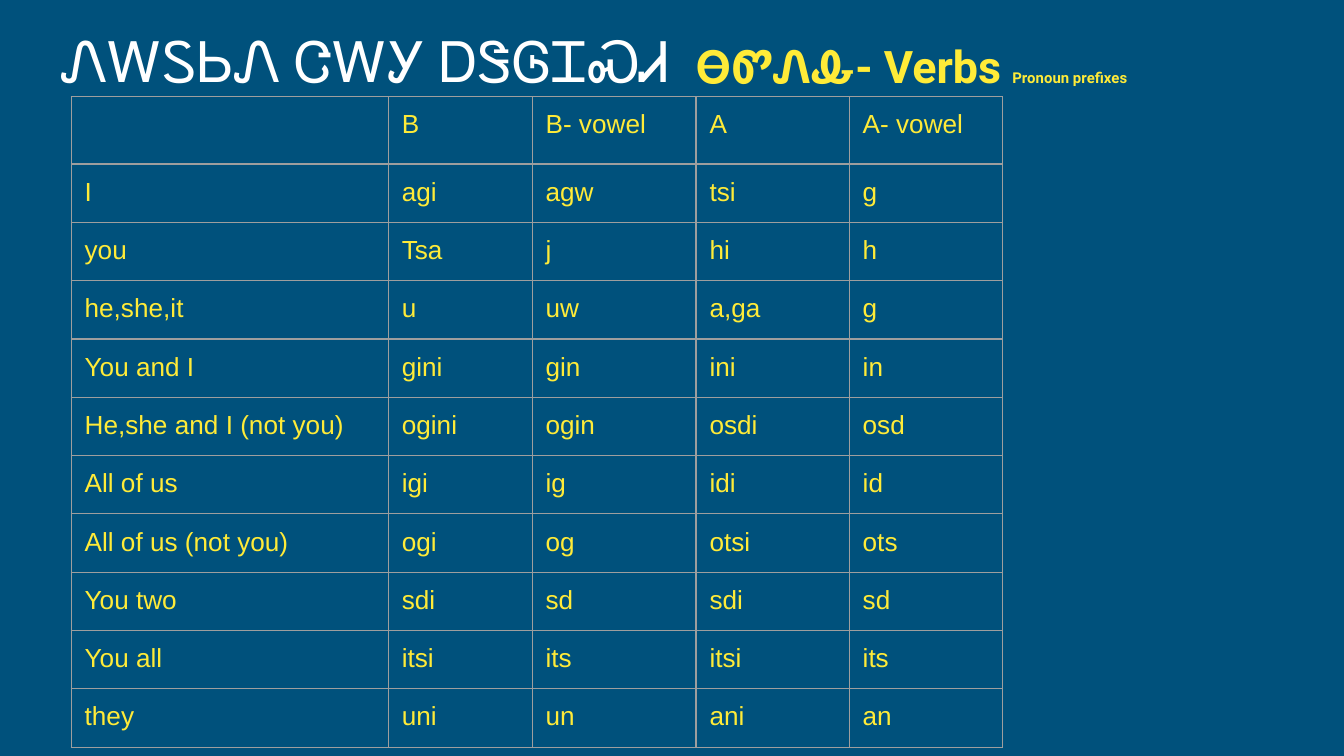
from pptx import Presentation
from pptx.dml.color import RGBColor
from pptx.enum.text import MSO_ANCHOR, MSO_AUTO_SIZE, PP_ALIGN
from pptx.oxml import parse_xml
from pptx.oxml.ns import nsdecls
from pptx.util import Inches, Pt

COLORS = {"background": "00517C", "title": "FFFFFF", "accent": "FFEB38", "border": "9E9E9E"}

TITLE = "ᏁᎳᏚᏏᏁ ᏣᎳᎩ ᎠᏕᎶᏆᏍᏗ"
SUBTITLE = [("ᎾᏛᏁᎲ- Verbs ", 24), ("Pronoun prefixes", 8)]
PREFIXES = [
    ("", "B", "B- vowel", "A", "A- vowel"),
    ("I", "agi", "agw", "tsi", "g"),
    ("you", "Tsa", "j", "hi", "h"),
    ("he,she,it", "u", "uw", "a,ga", "g"),
    ("You and I", "gini", "gin", "ini", "in"),
    ("He,she and I (not you)", "ogini", "ogin", "osdi", "osd"),
    ("All of us", "igi", "ig", "idi", "id"),
    ("All of us (not you)", "ogi", "og", "otsi", "ots"),
    ("You two", "sdi", "sd", "sdi", "sd"),
    ("You all", "itsi", "its", "itsi", "its"),
    ("they", "uni", "un", "ani", "an"),
]
COLUMN_WIDTHS = [2.36, 1.07, 1.22, 1.14, 1.14]
TABLE_HEIGHT, HEADER_HEIGHT = 4.83, 0.5
BODY_ROWS = len(PREFIXES) - 1
ROW_HEIGHTS = [HEADER_HEIGHT] + [(TABLE_HEIGHT - HEADER_HEIGHT) / BODY_ROWS] * BODY_ROWS
MARGIN = Inches(0.1)


def add_text(paragraph, text, size, font, color="accent", bold=False):
    span = paragraph.add_run()
    span.text = text
    span.font.size = Pt(size)
    span.font.name = font
    span.font.bold = bold
    span.font.color.rgb = RGBColor.from_string(COLORS[color])


def set_margins(holder):
    holder.margin_left = holder.margin_right = MARGIN
    holder.margin_top = holder.margin_bottom = MARGIN


def set_frame(frame, anchor, auto_size):
    set_margins(frame)
    frame.word_wrap = True
    frame.vertical_anchor = anchor
    frame.auto_size = auto_size


def add_borders(cell):
    properties = cell._tc.get_or_add_tcPr()
    for position, side in enumerate(("lnL", "lnR", "lnT", "lnB")):
        properties.insert(position, parse_xml(
            f'<a:{side} {nsdecls("a")} w="{Pt(0.75)}"><a:solidFill>'
            f'<a:srgbClr val="{COLORS["border"]}"/></a:solidFill></a:{side}>'))


# Widescreen page, 16:9
deck = Presentation()
deck.slide_width, deck.slide_height = Inches(10), Inches(10 * 9 / 16)
page = deck.slides.add_slide(deck.slide_layouts[5])
page.background.fill.solid()
page.background.fill.fore_color.rgb = RGBColor.from_string(COLORS["background"])

# Title
title = page.shapes.title
title.left, title.top = Inches(0.36), Inches(0.05)
title.width, title.height = Inches(9.15), Inches(0.75)
set_frame(title.text_frame, MSO_ANCHOR.BOTTOM, MSO_AUTO_SIZE.NONE)
heading = title.text_frame.paragraphs[0]
heading.alignment = PP_ALIGN.LEFT
add_text(heading, TITLE, 30, "Roboto Slab", color="title")

# Subtitle beside the title
box = page.shapes.add_textbox(Inches(5.08), Inches(0.19), Inches(4.29), Inches(0.61))
set_frame(box.text_frame, MSO_ANCHOR.TOP, MSO_AUTO_SIZE.SHAPE_TO_FIT_TEXT)
for text, size in SUBTITLE:
    add_text(box.text_frame.paragraphs[0], text, size, "Roboto", bold=True)

# Table of pronoun prefixes
table = page.shapes.add_table(
    len(PREFIXES), len(COLUMN_WIDTHS), Inches(0.53), Inches(0.72),
    Inches(sum(COLUMN_WIDTHS)), Inches(TABLE_HEIGHT)).table
table.first_row = table.horz_banding = False
for column, width in zip(table.columns, COLUMN_WIDTHS):
    column.width = Inches(width)
for row, height, words in zip(table.rows, ROW_HEIGHTS, PREFIXES):
    row.height = Inches(height)
    for cell, word in zip(row.cells, words):
        set_margins(cell)
        cell.fill.background()
        add_borders(cell)
        if word:
            add_text(cell.text_frame.paragraphs[0], word, 14, "Arial")

deck.save("out.pptx")
